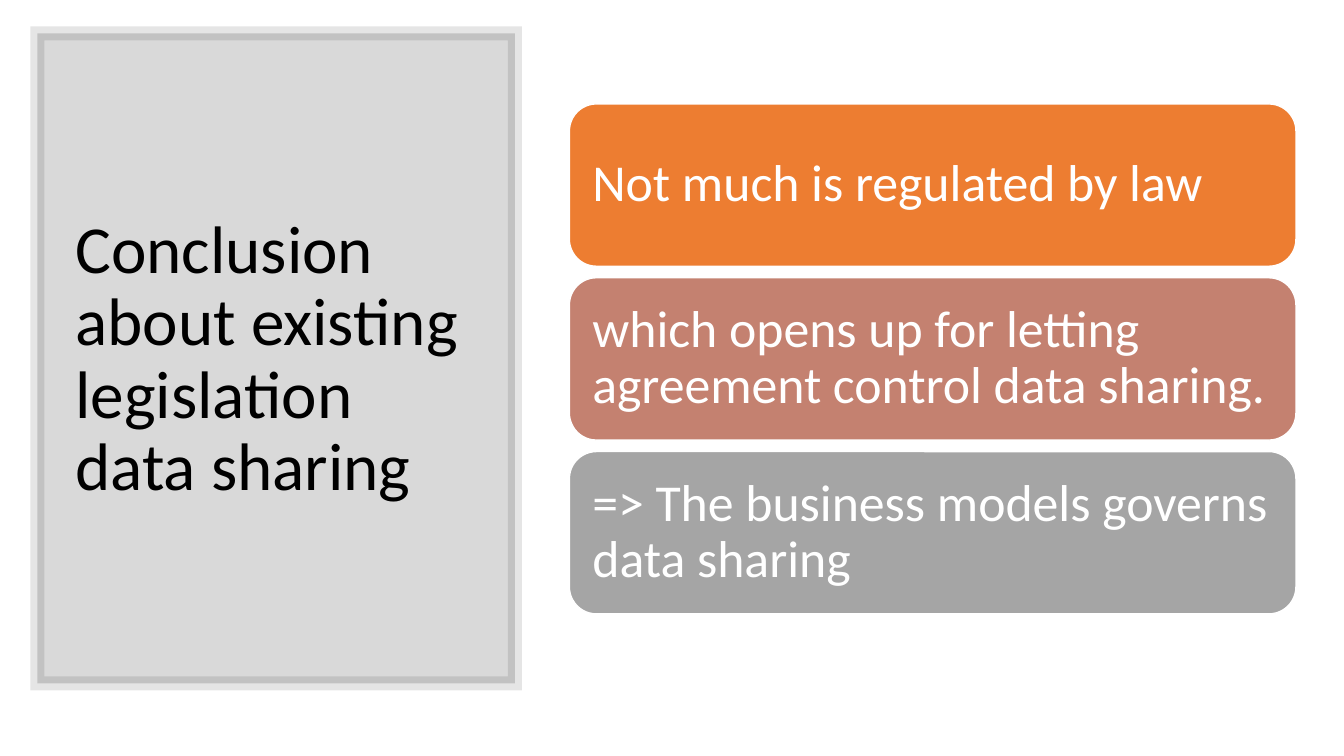
from lxml.etree import SubElement
from pptx import Presentation
from pptx.dml.color import RGBColor
from pptx.enum.shapes import MSO_SHAPE
from pptx.enum.text import MSO_ANCHOR, MSO_AUTO_SIZE, PP_ALIGN
from pptx.oxml.ns import qn
from pptx.util import Cm, Pt


def paint(color_format, hex_color, opacity=100):
    color_format.rgb = RGBColor.from_string(hex_color)
    if opacity < 100:
        srgb = color_format._xFill.find(qn("a:srgbClr"))
        SubElement(srgb, qn("a:alpha"), val=str(opacity * 1000))


def write(frame, text, size, color, font="Calibri", inset=(0.25, 0.13)):
    frame.word_wrap = True
    frame.auto_size = MSO_AUTO_SIZE.NONE
    frame.vertical_anchor = MSO_ANCHOR.MIDDLE
    frame.margin_left = frame.margin_right = Cm(inset[0])
    frame.margin_top = frame.margin_bottom = Cm(inset[1])
    paragraph = frame.paragraphs[0]
    paragraph.alignment = PP_ALIGN.LEFT
    paragraph.line_spacing = 0.9
    run = paragraph.add_run()
    run.text = text
    run.font.name = font
    run.font.size = Pt(size)
    paint(run.font.color, color)


class ConclusionSlide:
    """Holds the style and the current slide, and adds its elements."""

    dark, light = "000000", "FFFFFF"
    title_size, card_size = 48, 37

    def __init__(self, presentation):
        self.slide = presentation.slides.add_slide(presentation.slide_layouts[5])

    def box(self, preset, place, fill, line, width, fill_opacity=100, line_opacity=100):
        shape = self.slide.shapes.add_shape(preset, *map(Cm, place))
        shape.shadow.inherit = False
        shape.fill.solid()
        shape.line.fill.solid()
        shape.line.width = Pt(width)
        for color_format, color, opacity in (
            (shape.fill, fill, fill_opacity),
            (shape.line.fill, line, line_opacity),
        ):
            paint(color_format.fore_color, color)
            if opacity < 100:
                holder = shape._element.spPr if color_format is shape.fill else shape.line._ln
                srgb = holder.find(qn("a:solidFill")).find(qn("a:srgbClr"))
                SubElement(srgb, qn("a:alpha"), val=str(opacity * 1000))
        return shape

    def panel(self, place):
        panel = self.box(MSO_SHAPE.RECTANGLE, place, self.dark, self.dark, 10, 15, 10)
        SubElement(panel.line._ln, qn("a:miter"), lim="800000")

    def title(self, text, place):
        title = self.slide.shapes.title
        title.left, title.top, title.width, title.height = map(Cm, place)
        write(title.text_frame, text, self.title_size, self.dark)
        self.slide.shapes._spTree.append(title._element)

    def card(self, text, place, fill):
        card = self.box(MSO_SHAPE.ROUNDED_RECTANGLE, place, fill, self.light, 1)
        write(card.text_frame, text, self.card_size, self.light, inset=(0.38, 0.38))


def main():
    presentation = Presentation()
    presentation.slide_width, presentation.slide_height = Cm(33.87), Cm(19.05)
    conclusion = ConclusionSlide(presentation)
    conclusion.panel((0.94, 0.84, 12.04, 16.38))
    conclusion.title(
        "Conclusion about existing legislation data sharing", (1.65, 1.78, 10.57, 14.6)
    )
    statements = (
        ("Not much is regulated by law", "ED7D31"),
        ("which opens up for letting agreement control data sharing.", "C48170"),
        ("=> The business models governs data sharing", "A5A5A5"),
    )
    for row, (statement, fill) in enumerate(statements):
        conclusion.card(statement, (14.35, 2.62 + row * 4.38, 18.31, 4.09), fill)
    presentation.save("out.pptx")


if __name__ == "__main__":
    main()
